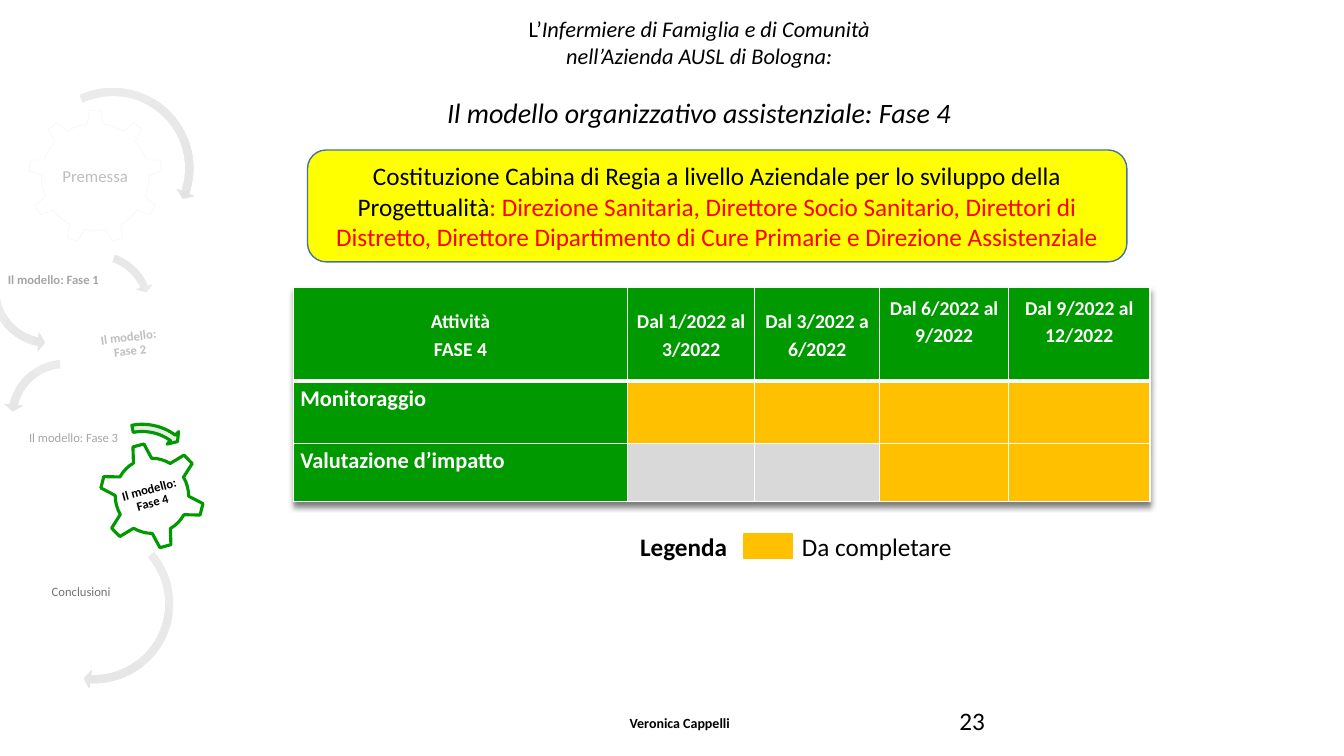
from lxml import etree
from pptx import Presentation, util as u
from pptx.dml.color import RGBColor
from pptx.enum import shapes, text
from pptx.oxml import parse_xml
from pptx.oxml.ns import nsdecls, qn

COLORS = {
    "black": "000000", "white": "FFFFFF", "green": "009900", "amber": "FFC000",
    "grey": "D9D9D9", "yellow": "FFFF00", "red": "FF0000", "blue": "43739E",
    "faint": "F2F2F2", "pale": "BFBFBF", "mid": "A6A6A6", "dark": "767171",
    "arrow top": "EDEDED", "arrow bottom": "E1E1E1",
}
SHAPE = shapes.MSO_SHAPE
ALIGN = text.PP_ALIGN
MIDDLE = text.MSO_ANCHOR.MIDDLE

# Content: frames are (left, top, width, height) in cm
GEARS = [  # preset, frame, rotation, fill, line, line width
    (SHAPE.GEAR_9, (0.71, 2.77, 3.38, 3.38), 0, None, "faint", 0.25),
    (SHAPE.GEAR_6, (2.51, 11.15, 2.64, 2.69), 345, "white", "green", 2.25),
]
STEPS = [  # label, frame, rotation, size, color, bold
    ("Premessa", (0.71, 2.77, 3.38, 3.38), 0, 12, "pale", False),
    ("Il modello: Fase 1", (0, 5.72, 2.69, 2.69), 0, 9, "mid", True),
    ("Il modello: Fase 2", (2.51, 7.92, 1.5, 1.52), 353, 9, "pale", True),
    ("Il modello: Fase 3", (0.38, 9.58, 2.95, 2.95), 0, 9, "mid", False),
    ("Il modello: Fase 4", (3.07, 11.76, 1.47, 1.5), 345, 9, "black", True),
    ("Conclusioni", (0.38, 13.26, 3.33, 3.33), 0, 9, "dark", False),
]
LONG = (SHAPE.CIRCULAR_ARROW, (0.047, 2.99, 24.36, 160.47, 0.055))
LEFT = (SHAPE.LEFT_CIRCULAR_ARROW, (0.065, 4.3, 104.89, 148.38, 0.075))
SHORT = (SHAPE.CIRCULAR_ARROW, (0.06, 3.94, 133.14, 105.08, 0.07))
ARROWS = [  # style, left, top, side, rotation, line
    (LONG, 0.69, 2.08, 4.32, 337.9, None),
    (LEFT, -0.36, 5.72, 3.15, 285.8, None),
    (SHORT, 0.89, 6.22, 3.07, 114.5, None),
    (LONG, 0.23, 13.08, 4.27, 51.9, None),
    (LEFT, 0.08, 8.94, 3.1, 17.7, None),
    (SHORT, 2.06, 10.57, 3.05, 84.1, "green"),
]
TITLE = [  # space before in points, runs of (text, size, italic)
    (0, [("L’", 16, False), ("Infermiere di Famiglia e di Comunità", 16, True)]),
    (0, [("nell’Azienda AUSL di Bologna:", 16, True)]),
    (19.5, [("Il modello organizzativo assistenziale: Fase 4", 20, True)]),
]
CALLOUT = [
    ("Costituzione Cabina di Regia a livello Aziendale per lo sviluppo della "
     "Progettualità", "black"),
    (": Direzione Sanitaria, Direttore Socio Sanitario, Direttori di Distretto, "
     "Direttore Dipartimento di Cure Primarie e Direzione Assistenziale", "red"),
]
COLUMNS = [8.43, 3.2, 3.15, 3.25, 3.56]
ROWS = [2.36, 1.57, 1.47]
HEADER = [  # lines, bottom margin in cm
    (["Attività", "FASE 4"], 0),
    (["Dal 1/2022 al 3/2022"], 0),
    (["Dal 3/2022 a 6/2022"], 0),
    (["Dal 6/2022 al 9/2022"], 0.7),
    (["Dal 9/2022 al 12/2022"], 0.7),
]
ACTIVITIES = [
    ("Monitoraggio", ALIGN.LEFT, ["amber"] * 4),
    ("Valutazione d’impatto", ALIGN.JUSTIFY, ["grey"] * 2 + ["amber"] * 2),
]
LABELS = [  # text, frame, size, bold, alignment
    ("Veronica Cappelli", (15.24, 17.88, 3.4, 0.69), 10, True, ALIGN.RIGHT),
    ("Da completare", (19.96, 13.26, 4.7, 1.02), 18, False, ALIGN.LEFT),
    ("Legenda", (15.88, 13.26, 3.76, 1.02), 18, True, ALIGN.LEFT),
    ("23", (23.93, 17.65, 7.62, 1.02), 18, False, ALIGN.LEFT),
]

deck = Presentation()
deck.slide_width, deck.slide_height = u.Cm(33.87), u.Cm(19.05)
page = deck.slides.add_slide(deck.slide_layouts[6])


def rgb(name):
    return RGBColor.from_string(COLORS[name])


def paint(target, name):
    if name:
        target.fill.solid()
        target.fill.fore_color.rgb = rgb(name)
    else:
        target.fill.background()


def add_shape(preset, frame, fill=None, line=None, width=1, rotation=0):
    shape = page.shapes.add_shape(preset, *map(u.Cm, frame))
    shape.shadow.inherit = False
    shape.rotation = rotation
    paint(shape, fill)
    paint(shape.line, line)
    if line:
        shape.line.width = u.Pt(width)
    return shape


def add_box(frame, rotation=0):
    box = page.shapes.add_textbox(*map(u.Cm, frame))
    box.rotation = rotation
    box.text_frame.word_wrap = True
    return box.text_frame


def add_span(para, words, size, color="black", bold=False, italic=False):
    span = para.add_run()
    span.text = words
    font = span.font
    font.name, font.size, font.bold, font.italic = "Calibri", u.Pt(size), bold, italic
    font.color.rgb = rgb(color)


def next_para(frame, index, align, spacing=None):
    para = frame.add_paragraph() if index else frame.paragraphs[0]
    para.alignment = align
    para.line_spacing = spacing
    return para


def set_borders(cell, bottom):
    props = cell._tc.get_or_add_tcPr()
    for side, points in (("L", 1), ("R", 1), ("T", 1), ("B", bottom)):
        line = etree.SubElement(props, qn(f"a:ln{side}"), w=str(u.Pt(points)))
        fill = etree.SubElement(line, qn("a:solidFill"))
        etree.SubElement(fill, qn("a:srgbClr"), val=COLORS["white"])


# Gear path along the left edge
for preset, frame, rotation, fill, line, width in GEARS:
    add_shape(preset, frame, fill, line, width, rotation)
for words, frame, rotation, size, color, bold in STEPS:
    box = add_box(frame, rotation)
    box.margin_left = box.margin_right = box.margin_top = box.margin_bottom = u.Cm(0.03)
    box.vertical_anchor = MIDDLE
    add_span(next_para(box, 0, ALIGN.CENTER, 0.9), words, size, color, bold)
for (preset, adjustments), left, top, side, rotation, line in ARROWS:
    arrow = add_shape(preset, (left, top, side, side), None, line, 2.25, rotation)
    for index, value in enumerate(adjustments):
        arrow.adjustments[index] = value
    arrow.fill.gradient()
    arrow.fill.gradient_angle = 270
    for stop, name in zip(arrow.fill.gradient_stops, ("arrow top", "arrow bottom")):
        stop.color.rgb = rgb(name)

# Title
box = add_box((6.15, 0.25, 22.94, 3.18))
for index, (gap, spans) in enumerate(TITLE):
    para = next_para(box, index, ALIGN.CENTER)
    para.space_before = u.Pt(gap)
    for words, size, italic in spans:
        add_span(para, words, size, italic=italic)

# Schedule table
frame = (7.39, 7.24, sum(COLUMNS), sum(ROWS))
table = page.shapes.add_table(len(ROWS), len(COLUMNS), *map(u.Cm, frame)).table
for column, width in zip(table.columns, COLUMNS):
    column.width = u.Cm(width)
for row, height in zip(table.rows, ROWS):
    row.height = u.Cm(height)
table._tbl.tblPr.insert(0, parse_xml(
    f'<a:effectLst {nsdecls("a")}><a:outerShdw blurRad="50800" dist="38100" '
    'dir="5400000"><a:srgbClr val="000000"><a:alpha val="50000"/></a:srgbClr>'
    '</a:outerShdw></a:effectLst>'))


def fill_cell(row, column, color, lines=(), size=14, align=ALIGN.CENTER, bottom=0):
    cell = table.cell(row, column)
    set_borders(cell, 1 if row else 3)
    paint(cell, color)
    cell.margin_left = cell.margin_right = u.Cm(0.18)
    cell.margin_top, cell.margin_bottom = 0, u.Cm(bottom)
    if not row:
        cell.vertical_anchor = MIDDLE
    for index, words in enumerate(lines):
        para = next_para(cell.text_frame, index, align, 1.15)
        add_span(para, words, size, "white", True)


for column, (lines, bottom) in enumerate(HEADER):
    fill_cell(0, column, "green", lines, bottom=bottom)
for row, (activity, align, periods) in enumerate(ACTIVITIES, 1):
    fill_cell(row, 0, "green", [activity], 16, align)
    for column, color in enumerate(periods, 1):
        fill_cell(row, column, color)

# Legend, author and page number
add_shape(SHAPE.RECTANGLE, (18.75, 13.46, 1.22, 0.61), "amber", "amber")
for words, frame, size, bold, align in LABELS:
    add_span(next_para(add_box(frame), 0, align), words, size, bold=bold)

# Highlighted statement
callout = add_shape(SHAPE.ROUNDED_RECTANGLE, (7.75, 3.78, 20.65, 2.82), "yellow", "blue")
callout.text_frame.word_wrap = True
callout.text_frame.vertical_anchor = MIDDLE
para = next_para(callout.text_frame, 0, ALIGN.CENTER)
for words, color in CALLOUT:
    add_span(para, words, 18, color)

deck.save("out.pptx")
